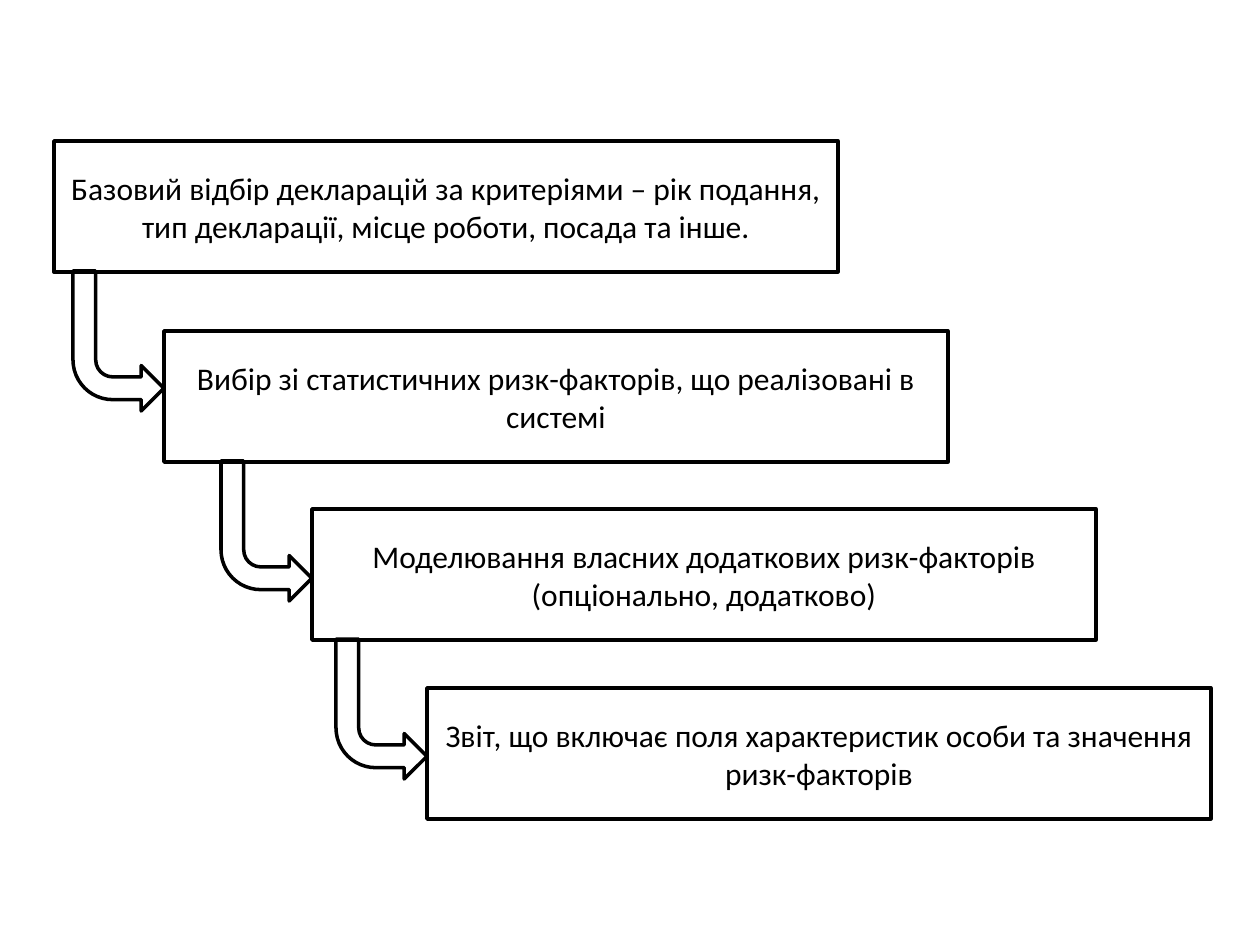
from dataclasses import dataclass

from pptx import Presentation
from pptx.dml.color import RGBColor
from pptx.enum.shapes import MSO_SHAPE
from pptx.enum.text import MSO_ANCHOR, PP_ALIGN
from pptx.util import Emu, Pt

EMU_PER_PX = 914400 / 126
BLANK_LAYOUT = 6
RECTANGLE = MSO_SHAPE.RECTANGLE
BENT_ARROW = MSO_SHAPE.BENT_ARROW
MIDDLE = MSO_ANCHOR.MIDDLE
CENTER = PP_ALIGN.CENTER

PAGE_WIDTH, PAGE_HEIGHT = 1260, 945
BOX_WIDTH, BOX_HEIGHT = 784, 131
ARROW_WIDTH, ARROW_HEIGHT = 91, 140

# left, top, text
STEPS = [
    (54, 141, "Базовий відбір декларацій за критеріями – рік подання, "
              "тип декларації, місце роботи, посада та інше."),
    (164, 331, "Вибір зі статистичних ризк-факторів, що реалізовані в системі"),
    (312, 509, "Моделювання власних додаткових ризк-факторів "
               "(опціонально, додатково)"),
    (427, 688, "Звіт, що включає поля характеристик особи та значення "
               "ризк-факторів"),
]


@dataclass(frozen=True)
class Theme:
    ink: RGBColor = RGBColor(0, 0, 0)
    paper: RGBColor = RGBColor(255, 255, 255)
    font: str = "Calibri"
    body_size: int = 18
    line_width: int = 2


def px(length):
    return Emu(round(length * EMU_PER_PX))


def write_text(frame, text, *, font, size, color, align=CENTER, anchor=MIDDLE):
    frame.word_wrap = True
    frame.vertical_anchor = anchor
    para = frame.paragraphs[0]
    para.alignment = align
    span = para.add_run()
    span.text = text
    span.font.name = font
    span.font.size = Pt(size)
    span.font.color.rgb = color


class Page:
    def __init__(self, slide, theme):
        self.slide = slide
        self.theme = theme

    def outlined(self, kind, left, top, width, height):
        shape = self.slide.shapes.add_shape(
            kind, px(left), px(top), px(width), px(height))
        shape.shadow.inherit = False
        shape.line.color.rgb = self.theme.ink
        shape.line.width = Pt(self.theme.line_width)
        return shape

    def step_box(self, left, top, text):
        box = self.outlined(RECTANGLE, left, top, BOX_WIDTH, BOX_HEIGHT)
        box.fill.solid()
        box.fill.fore_color.rgb = self.theme.paper
        write_text(box.text_frame, text, font=self.theme.font,
                   size=self.theme.body_size, color=self.theme.ink)

    def step_arrow(self, left, top):
        """Draw an arrow that runs down and then turns right."""
        arrow = self.outlined(BENT_ARROW, left, top, ARROW_WIDTH, ARROW_HEIGHT)
        arrow.fill.background()
        arrow.rotation = 180
        arrow._element.spPr.get_or_add_xfrm().set("flipH", "1")


def main():
    deck = Presentation()
    deck.slide_width, deck.slide_height = px(PAGE_WIDTH), px(PAGE_HEIGHT)
    slide = deck.slides.add_slide(deck.slide_layouts[BLANK_LAYOUT])
    page = Page(slide, Theme())

    for left, top, text in STEPS:
        page.step_box(left, top, text)
    for (_, top, _), (next_left, _, _) in zip(STEPS, STEPS[1:]):
        page.step_arrow(next_left - ARROW_WIDTH, top + BOX_HEIGHT - 1)

    deck.save("out.pptx")


if __name__ == "__main__":
    main()
